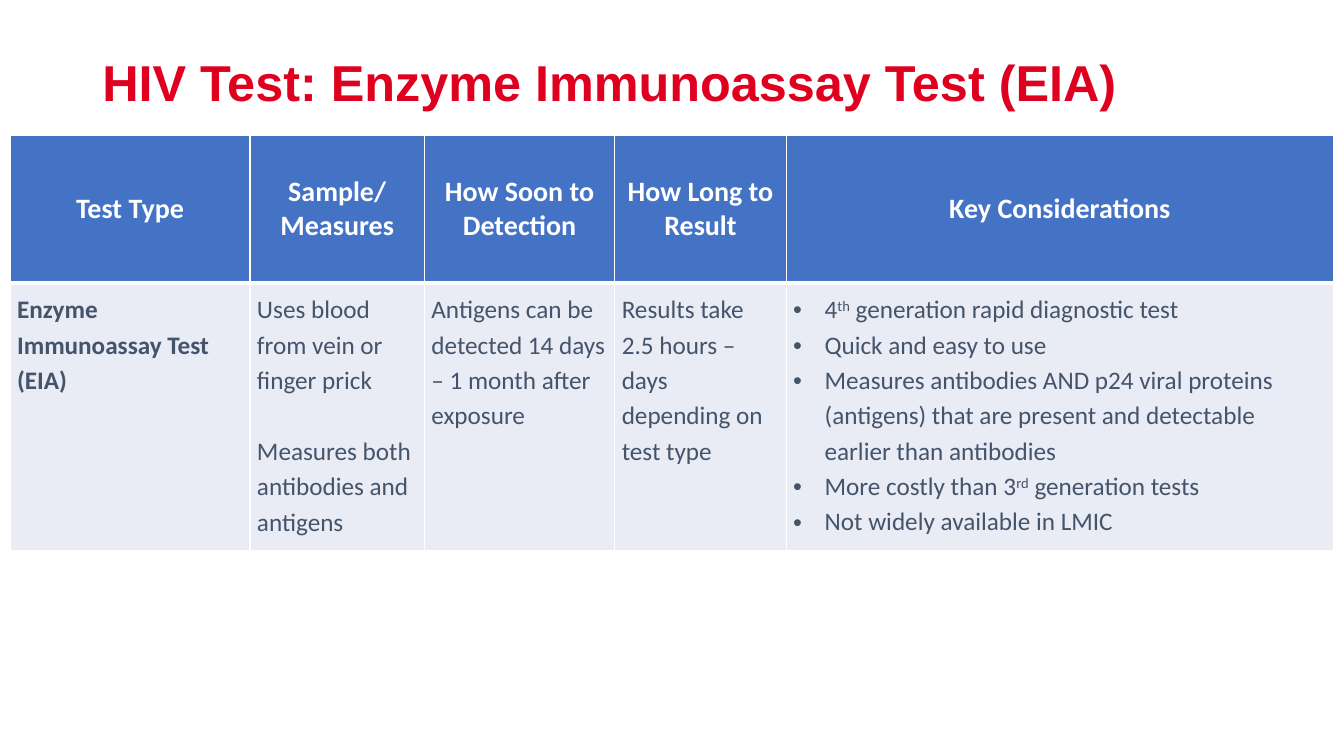
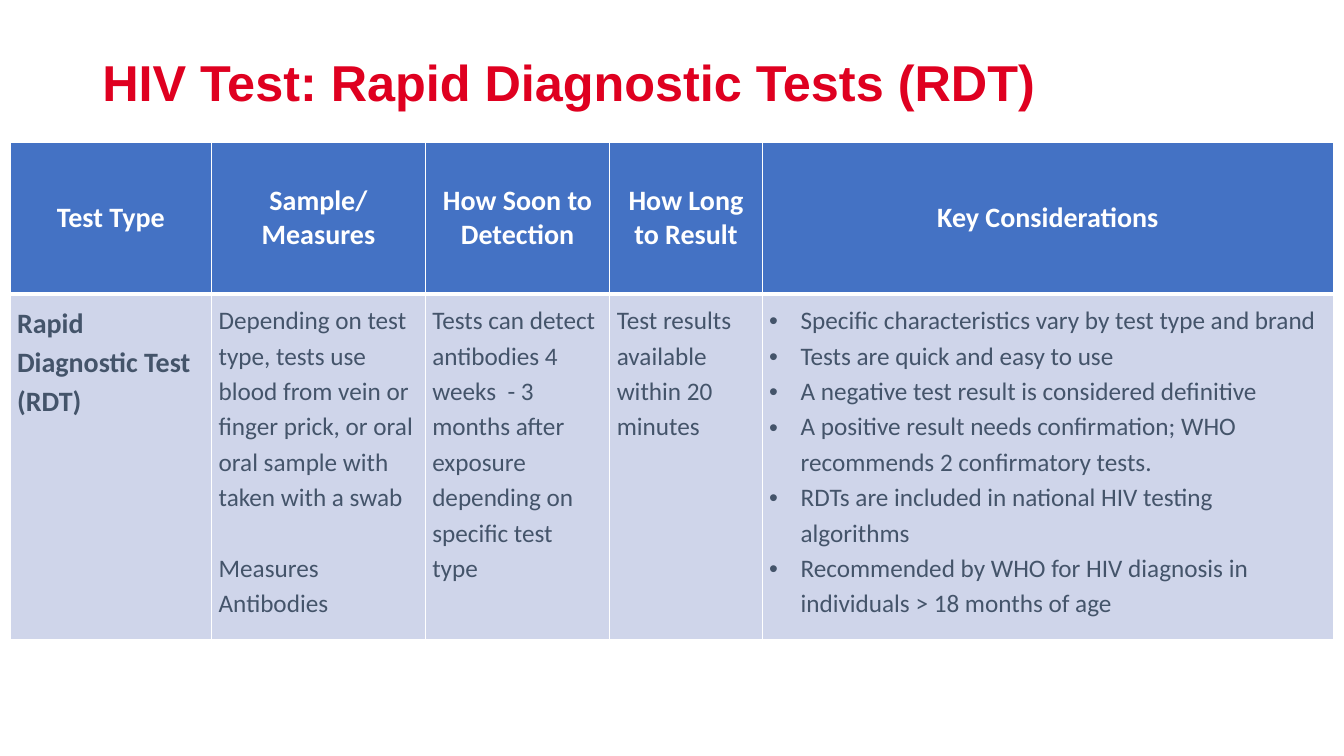
import pptx
import pptx.dml.color
import pptx.enum.text
import pptx.oxml
import pptx.oxml.ns
import pptx.util
from dataclasses import dataclass

Pt = pptx.util.Pt
Align = pptx.enum.text.PP_ALIGN
Anchor = pptx.enum.text.MSO_ANCHOR
NS = pptx.oxml.ns.nsdecls("a")


@dataclass(frozen=True)
class Theme:
    red: str = "DF0020"
    blue: str = "4472C4"
    slate: str = "44546A"
    white: str = "FFFFFF"
    pale: str = "E9EBF5"
    mist: str = "CFD5EA"
    title: int = 36
    head: int = 20
    body: int = 18
    sans: str = "Arial"
    text: str = "Calibri"


def rgb(color):
    return pptx.dml.color.RGBColor.from_string(color)


def apply(target, values):
    for name, value in values.items():
        setattr(target, name, value)


class Deck:
    def __init__(self, theme):
        self.theme = theme
        self.file = pptx.Presentation()
        apply(self.file, {"slide_width": Pt(960), "slide_height": Pt(540)})
        self.slide = None

    def page(self, title):
        self.slide = self.file.slides.add_slide(self.file.slide_layouts[6])
        frame = self.slide.shapes.add_textbox(Pt(66), Pt(29), Pt(857), Pt(58)).text_frame
        apply(frame, {"word_wrap": True, "vertical_anchor": Anchor.MIDDLE})
        look = self.theme
        self.label(frame, [title], look.title, look.red, True, look.sans)

    def label(self, frame, lines, size, color, bold, face, style=None, bullet=False, gap=0):
        """Fill a frame; text between ^ marks is superscript."""
        for row, line in enumerate(lines):
            para = frame.paragraphs[0] if row == 0 else frame.add_paragraph()
            apply(para, style or {})
            if row and gap:
                para.space_before = Pt(gap)
            if bullet:
                self.bullet(para)
            for part, words in enumerate(line.split("^")):
                run = para.add_run()
                run.text = words
                apply(run.font, {"size": Pt(size), "bold": bold, "name": face})
                run.font.color.rgb = rgb(color)
                if part % 2:
                    run.font._element.set("baseline", "30000")

    def bullet(self, para):
        props = para._p.get_or_add_pPr()
        props.set("marL", str(Pt(22.5)))
        props.set("indent", str(-Pt(22.5)))
        for tag in ('buFont {} typeface="Arial"', 'buChar {} char="•"'):
            props.append(pptx.oxml.parse_xml(f"<a:{tag.format(NS)}/>"))

    def paint(self, cell, fill, top):
        """Draw the cell borders, then its fill."""
        props = cell._tc.get_or_add_tcPr()
        for side, width in {"L": 1, "R": 1, "T": top, "B": 3}.items():
            props.append(pptx.oxml.parse_xml(
                f'<a:ln{side} {NS} w="{Pt(width)}"><a:solidFill>'
                f'<a:srgbClr val="{self.theme.white}"/></a:solidFill></a:ln{side}>'))
        cell.fill.solid()
        cell.fill.fore_color.rgb = rgb(fill)

    def table(self, top, widths, heights, heads, cells, fill, lead):
        look = self.theme
        grid = self.slide.shapes.add_table(
            2, len(widths), Pt(7.2), Pt(top), Pt(sum(widths)), Pt(sum(heights))).table
        grid.horz_banding = False
        for row, height in zip(grid.rows, heights):
            row.height = Pt(height)
        last = len(widths) - 1
        for col, width in enumerate(widths):
            grid.columns[col].width = Pt(width)
            # Header cell
            head = grid.cell(0, col)
            head.vertical_anchor = Anchor.MIDDLE
            self.paint(head, look.blue, 1)
            self.label(head.text_frame, heads[col], look.head, look.white, True,
                       look.text, {"alignment": Align.CENTER})
            # Body cell
            body = grid.cell(1, col)
            sides = ("left", "right", "top", "bottom")
            apply(body, {f"margin_{side}": Pt(5) for side in sides})
            self.paint(body, fill, 3)
            self.label(body.text_frame, cells[col], look.body if col else lead,
                       look.slate, col == 0, look.text, {"line_spacing": 1.15},
                       bullet=col == last, gap=25.3 if col == 1 else 0)


HEADS = [["Test Type"], ["Sample/", "Measures"], ["How Soon to Detection"],
         ["How Long to Result"], ["Key Considerations"]]


def main():
    theme = Theme()
    deck = Deck(theme)

    # Enzyme immunoassay
    deck.page("HIV Test: Enzyme Immunoassay Test (EIA)")
    deck.table(96.5, [171.4, 124.6, 136, 122.4, 391], [105.8, 192.2], HEADS, [
        ["Enzyme Immunoassay Test (EIA)"],
        ["Uses blood from vein or finger prick",
         "Measures both antibodies and antigens"],
        ["Antigens can be detected 14 days – 1 month after exposure"],
        ["Results take 2.5 hours – days depending on test type"],
        ["4^th^ generation rapid diagnostic test",
         "Quick and easy to use",
         "Measures antibodies AND p24 viral proteins (antigens) that are present "
         "and detectable earlier than antibodies",
         "More costly than 3^rd^ generation tests",
         "Not widely available in LMIC"],
    ], theme.pale, theme.body)

    # Rapid diagnostic tests
    deck.page("HIV Test: Rapid Diagnostic Tests (RDT)")
    deck.table(101.5, [144, 152.6, 131.8, 108.8, 408.2], [108.7, 247.7], HEADS, [
        ["Rapid Diagnostic Test", "(RDT)"],
        ["Depending on test type, tests use blood from vein or finger prick, "
         "or oral oral sample with taken with a swab",
         "Measures Antibodies"],
        ["Tests can detect antibodies 4 weeks  - 3 months after exposure "
         "depending on specific test type"],
        ["Test results available within 20 minutes"],
        ["Specific characteristics vary by test type and brand",
         "Tests are quick and easy to use",
         "A negative test result is considered definitive",
         "A positive result needs confirmation; WHO recommends 2 confirmatory tests.",
         "RDTs are included in national HIV testing algorithms",
         "Recommended by WHO for HIV diagnosis in individuals > 18 months of age"],
    ], theme.mist, theme.head)

    deck.file.save("out.pptx")


if __name__ == "__main__":
    main()
